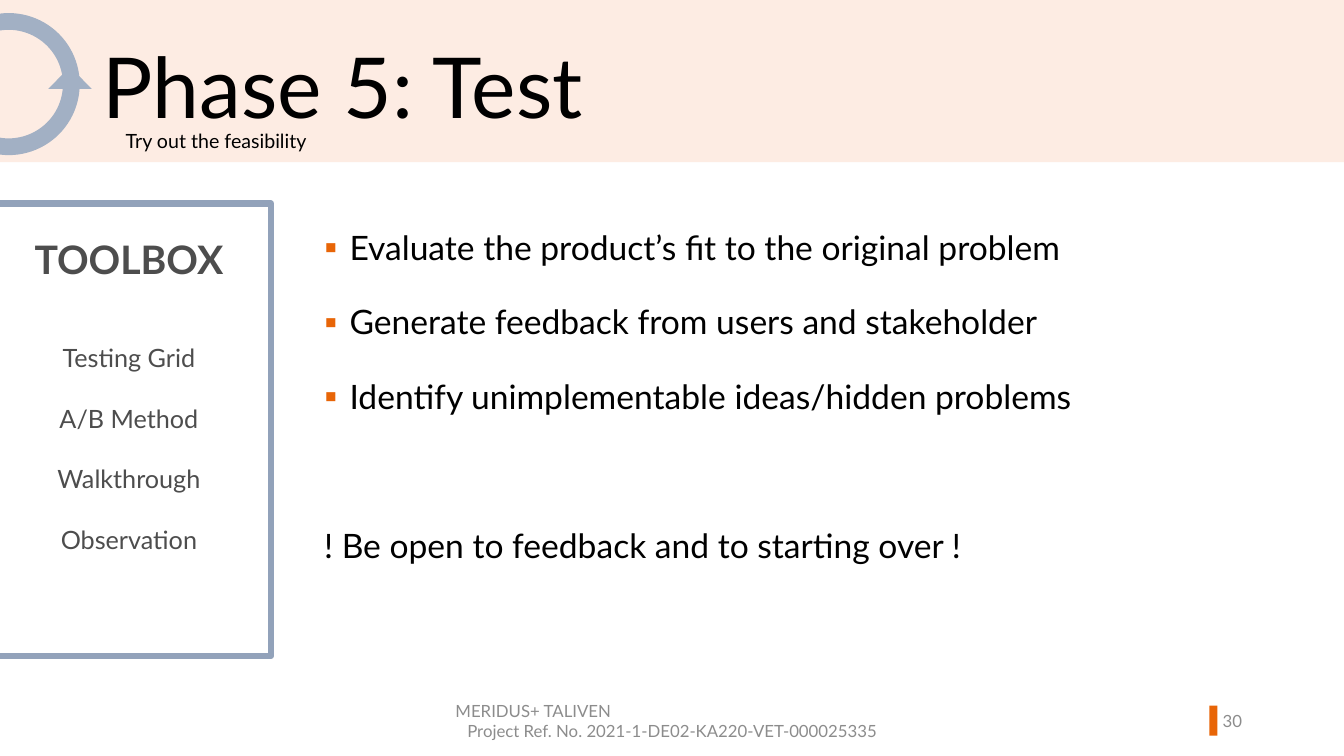
from dataclasses import dataclass

from lxml.etree import SubElement
from pptx import Presentation
from pptx.dml.color import RGBColor as Rgb
from pptx.enum.shapes import MSO_SHAPE as Kind
from pptx.enum.text import MSO_ANCHOR as Anchor, PP_ALIGN as Align
from pptx.oxml.ns import qn
from pptx.util import Cm, Pt


@dataclass(frozen=True)
class Theme:
    font: str = "Lato"
    band: str = "FDECE3"
    accent: str = "E86507"
    cycle: str = "A2B0C4"
    frame: str = "92A2BA"
    paper: str = "FFFFFF"
    ink: str = "000000"
    dark: str = "4D4D4D"
    pale: str = "8C8C8C"
    title: int = 60
    head: int = 28
    body: int = 24
    tool: int = 18
    note: int = 14
    foot: int = 12


THEME = Theme()
POINTS = [
    "Evaluate the product’s fit to the original problem",
    "Generate feedback from users and stakeholder",
    "Identify unimplementable ideas/hidden problems",
]
TOOLS = ["Testing Grid", "A/B Method", "Walkthrough", "Observation"]


def assign(target, values):
    for name, value in values.items():
        setattr(target, name, value)


def add_form(slide, kind, place, fill):
    form = slide.shapes.add_shape(kind, *map(Cm, place))
    form.shadow.inherit = False
    form.fill.solid()
    form.fill.fore_color.rgb = Rgb.from_string(fill)
    form.line.fill.background()
    return form


def add_box(slide, place, anchor=Anchor.TOP):
    """Add a wrapping text box and return its text frame."""
    frame = slide.shapes.add_textbox(*map(Cm, place)).text_frame
    assign(frame, {"word_wrap": True, "vertical_anchor": anchor})
    return frame


def write(frame, text, size, color, bold=False, **layout):
    """Fill the empty first paragraph, or append a new one."""
    first = frame.paragraphs[0]
    para = frame.add_paragraph() if first.runs else first
    assign(para, {"alignment": Align.LEFT, **layout})
    run = para.add_run()
    run.text = text
    assign(run.font, {"name": THEME.font, "size": Pt(size), "bold": bold})
    run.font.color.rgb = Rgb.from_string(color)
    return para


def add_bullet(para):
    props = para._p.get_or_add_pPr()
    for name, value in {"marL": Cm(0.64), "indent": -Cm(0.64)}.items():
        props.set(name, str(int(value)))
    color = SubElement(props, qn("a:buClr"))
    SubElement(color, qn("a:srgbClr"), val=THEME.accent)
    SubElement(props, qn("a:buFont"), typeface=THEME.font)
    SubElement(props, qn("a:buChar"), char="▪")


def add_header(slide):
    add_form(slide, Kind.RECTANGLE, (0, 0, 33.87, 4.09), THEME.band)
    title = add_box(slide, (2.34, 1.04, 25.22, 2.16))
    write(title, "Phase 5: Test", THEME.title, THEME.ink, line_spacing=0.9)
    ring = add_form(slide, Kind.DONUT, (-1.57, 0.33, 3.58, 3.58), THEME.cycle)
    ring.adjustments[0] = 0.118
    add_form(slide, Kind.ISOSCELES_TRIANGLE, (1.22, 1.68, 1.09, 0.56), THEME.cycle)
    note = add_box(slide, (2.92, 3.12, 9.86, 0.86))
    write(note, "Try out the feasibility", THEME.note, THEME.ink)


def add_points(slide):
    frame = add_box(slide, (7.92, 5.08, 23.62, 12.09))
    style = {"size": THEME.body, "color": THEME.ink, "line_spacing": 1.5}
    for text in POINTS:
        add_bullet(write(frame, text, space_before=Pt(10), **style))
    write(frame, "! Be open to feedback and to starting over !",
          space_before=Pt(63.2), **style)


def add_toolbox(slide):
    box = add_form(slide, Kind.RECTANGLE, (-0.33, 5.13, 7.16, 11.4), THEME.paper)
    box.line.color.rgb = Rgb.from_string(THEME.frame)
    box.line.width = Pt(4.5)
    frame = box.text_frame
    assign(frame, {"margin_top": Cm(0.79), "vertical_anchor": Anchor.TOP})
    write(frame, "TOOLBOX", THEME.head, THEME.dark, bold=True,
          alignment=Align.CENTER)
    row = THEME.tool * 1.2
    for rank, tool in enumerate(TOOLS):
        gap = row if rank else 2 * row
        write(frame, tool, THEME.tool, THEME.dark,
              alignment=Align.CENTER, space_before=Pt(gap))


def add_footer(slide):
    style = {"size": THEME.foot, "color": THEME.pale}
    foot = add_box(slide, (11.23, 17.65, 11.43, 1.02), Anchor.MIDDLE)
    write(foot, "MERIDUS+ TALIVEN", **style)
    write(foot, "Project Ref. No. 2021-1-DE02-KA220-VET-000025335",
          alignment=Align.CENTER, **style)
    add_form(slide, Kind.RECTANGLE, (30.48, 17.78, 0.2, 0.76), THEME.accent)
    page = add_box(slide, (29.9, 17.65, 1.65, 1.02), Anchor.MIDDLE)
    write(page, "30", alignment=Align.RIGHT, **style)


def main():
    deck = Presentation()
    assign(deck, {"slide_width": Cm(33.87), "slide_height": Cm(19.05)})
    slide = deck.slides.add_slide(deck.slide_layouts[6])
    add_header(slide)
    add_points(slide)
    add_toolbox(slide)
    add_footer(slide)
    deck.save("out.pptx")


if __name__ == "__main__":
    main()
